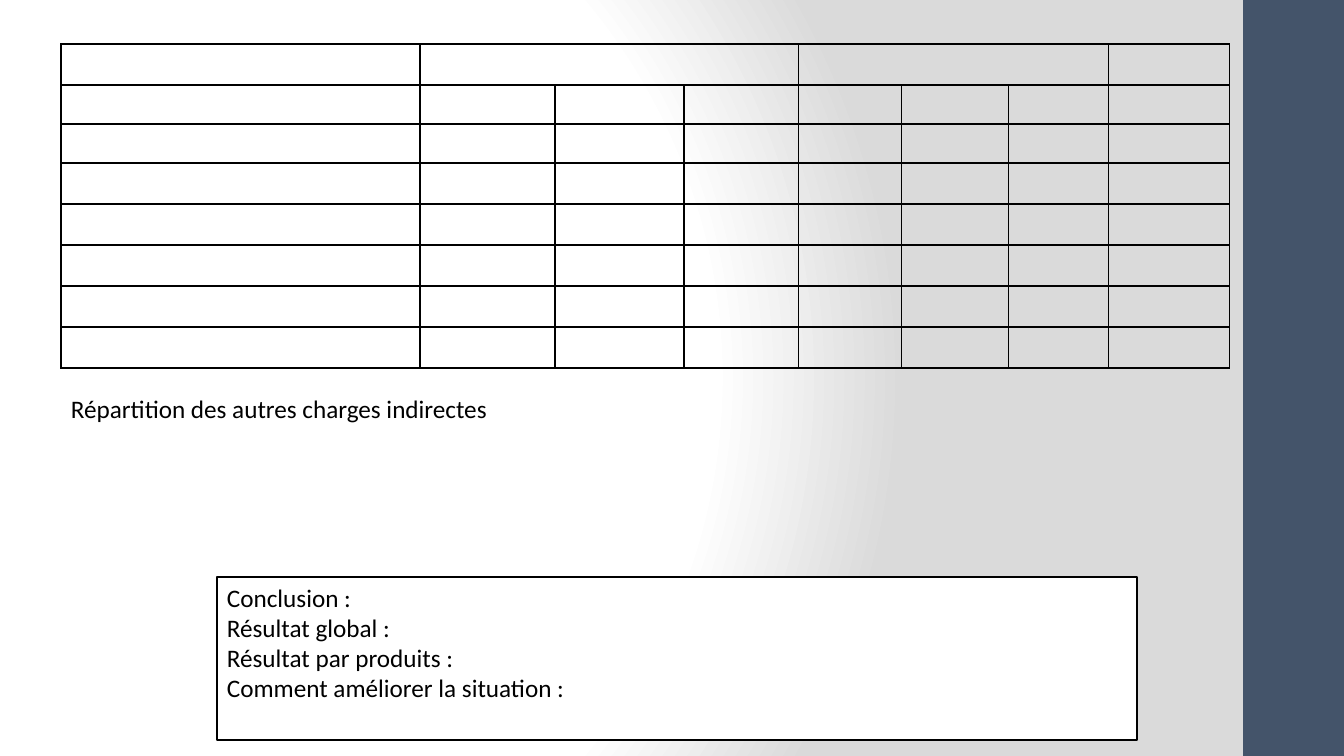
from dataclasses import dataclass

from lxml import etree
from pptx import Presentation
from pptx.dml.color import RGBColor
from pptx.enum.shapes import MSO_SHAPE
from pptx.enum.text import MSO_ANCHOR, PP_ALIGN
from pptx.oxml import parse_xml
from pptx.oxml.ns import nsdecls, qn
from pptx.util import Pt

RECTANGLE = MSO_SHAPE.RECTANGLE
TOP = MSO_ANCHOR.TOP
LEFT = PP_ALIGN.LEFT


@dataclass(frozen=True)
class Theme:
    font: str = "Calibri"
    text_size: int = 18
    cell_size: int = 12
    ink: str = "000000"
    paper: str = "FFFFFF"
    shade: str = "DADADA"
    sidebar: str = "44546A"
    grid_line: int = 1
    frame_line: int = 2


THEME = Theme()
PAGE_SIZE = (1344, 756)
SIDEBAR_BOX = (1243, 0, 101, 756)
TABLE_ORIGIN = (61, 44)
COLUMN_WIDTHS = [359, 135, 129, 115, 103, 107, 100, 121]
ROW_HEIGHTS = [41, 39, 39, 41, 41, 41, 41, 41]
HEADER_SPANS = [(1, 3), (4, 6)]
ALLOCATION_BOX = (61, 388, 1169, 132)
ALLOCATION_LINES = ["Répartition des autres charges indirectes"]
CONCLUSION_BOX = (217, 577, 920, 163)
CONCLUSION_LINES = [
    "Conclusion :",
    "Résultat global :",
    "Résultat par produits :",
    "Comment améliorer la situation :",
]
GRADIENT_STOPS = [(0, THEME.paper), (75, THEME.paper), (100, THEME.shade)]
GRADIENT_FOCUS = {"l": 20, "t": 50, "r": 100, "b": 50}


def px(length):
    return round(length * 914400 / 100.8)


def color(name):
    return RGBColor.from_string(name)


def paint_background(page):
    page.background.fill.gradient()
    gradient = page.background._cSld.find(".//" + qn("a:gradFill"))
    for child in list(gradient):
        gradient.remove(child)
    stops = etree.SubElement(gradient, qn("a:gsLst"))
    for position, shade in GRADIENT_STOPS:
        stop = etree.SubElement(stops, qn("a:gs"), pos=str(position * 1000))
        etree.SubElement(stop, qn("a:srgbClr"), val=shade)
    circle = etree.SubElement(gradient, qn("a:path"), path="circle")
    focus = {side: str(share * 1000) for side, share in GRADIENT_FOCUS.items()}
    etree.SubElement(circle, qn("a:fillToRect"), focus)


def add_rectangle(page, box, fill):
    shape = page.shapes.add_shape(RECTANGLE, *map(px, box))
    shape.shadow.inherit = False
    shape.fill.solid()
    shape.fill.fore_color.rgb = color(fill)
    shape.line.fill.background()
    return shape


def write_lines(shape, lines):
    frame = shape.text_frame
    frame.word_wrap = True
    frame.vertical_anchor = TOP
    frame.text = "\n".join(lines)
    for para in frame.paragraphs:
        para.alignment = LEFT
        for span in para.runs:
            span.font.name = THEME.font
            span.font.size = Pt(THEME.text_size)
            span.font.color.rgb = color(THEME.ink)


def format_cell(cell):
    properties = cell._tc.get_or_add_tcPr()
    for side in ("lnL", "lnR", "lnT", "lnB"):
        properties.append(parse_xml(
            f'<a:{side} {nsdecls("a")} w="{Pt(THEME.grid_line)}">'
            f'<a:solidFill><a:srgbClr val="{THEME.ink}"/></a:solidFill></a:{side}>'
        ))
    cell.fill.background()
    ending = cell.text_frame.paragraphs[0]._p.get_or_add_endParaRPr()
    ending.set("sz", str(THEME.cell_size * 100))


def add_cost_table(page):
    size = (sum(COLUMN_WIDTHS), sum(ROW_HEIGHTS))
    table = page.shapes.add_table(
        len(ROW_HEIGHTS), len(COLUMN_WIDTHS), *map(px, TABLE_ORIGIN + size)
    ).table
    for column, width in zip(table.columns, COLUMN_WIDTHS):
        column.width = px(width)
    for row, height in zip(table.rows, ROW_HEIGHTS):
        row.height = px(height)
        for cell in row.cells:
            format_cell(cell)
    for first, last in HEADER_SPANS:
        table.cell(0, first).merge(table.cell(0, last))


def main():
    deck = Presentation()
    deck.slide_width, deck.slide_height = map(px, PAGE_SIZE)
    page = deck.slides.add_slide(deck.slide_layouts[6])
    paint_background(page)
    add_rectangle(page, SIDEBAR_BOX, THEME.sidebar)
    add_cost_table(page)
    write_lines(page.shapes.add_textbox(*map(px, ALLOCATION_BOX)), ALLOCATION_LINES)
    conclusion = add_rectangle(page, CONCLUSION_BOX, THEME.paper)
    conclusion.line.color.rgb = color(THEME.ink)
    conclusion.line.width = Pt(THEME.frame_line)
    write_lines(conclusion, CONCLUSION_LINES)
    deck.save("out.pptx")


if __name__ == "__main__":
    main()
